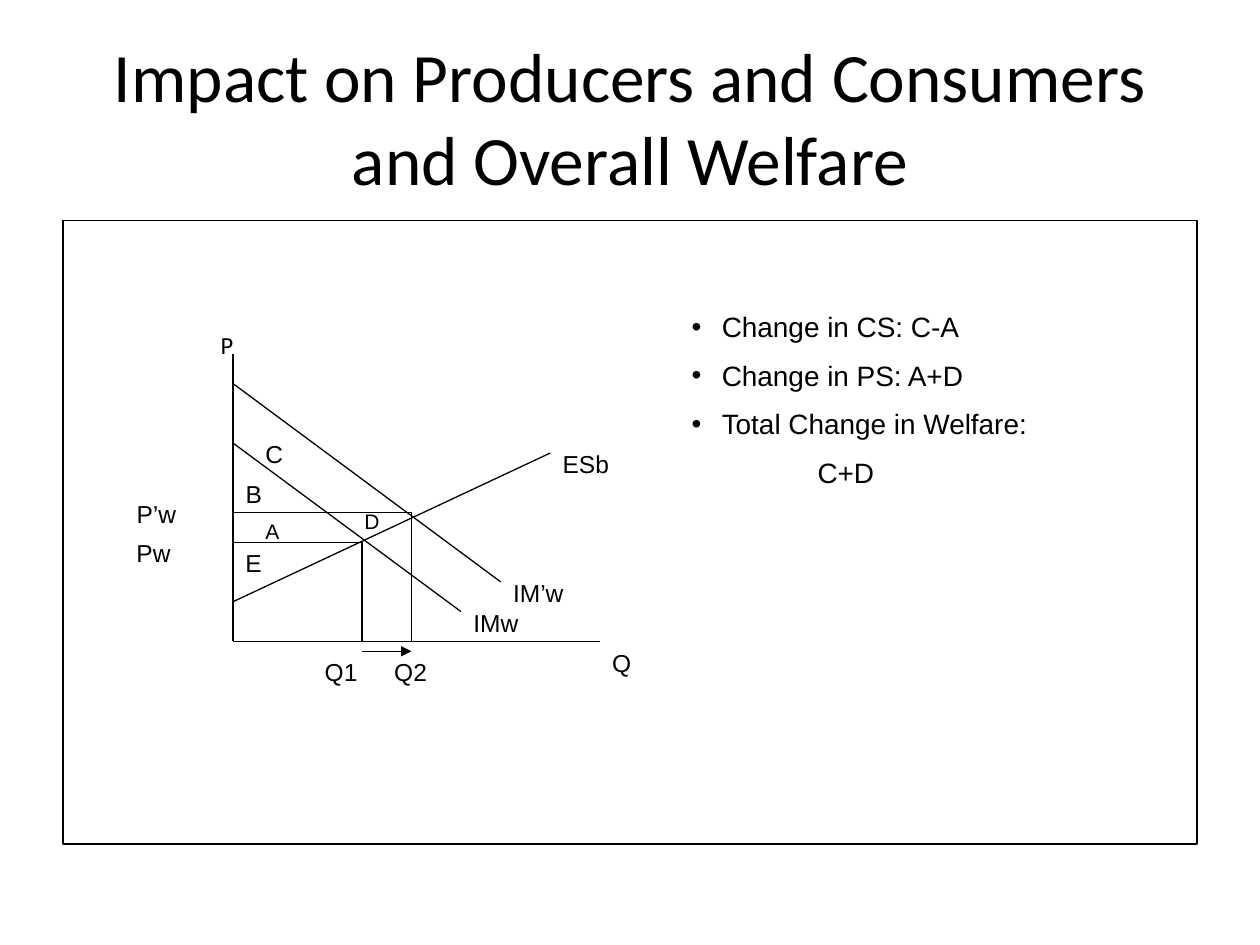
import dataclasses

import pptx
import pptx.dml.color
import pptx.enum.dml
import pptx.enum.shapes
import pptx.enum.text
import pptx.oxml
import pptx.oxml.ns
import pptx.util

Inches = pptx.util.Inches
Pt = pptx.util.Pt


@dataclasses.dataclass(frozen=True)
class Theme:
    """Colours, fonts and sizes of the slide."""
    ink: str = "000000"
    heading_font: str = "Calibri"
    body_font: str = "Arial"
    title_size: float = 39.6
    bullet_size: float = 16
    label_size: float = 14
    small_size: float = 12
    frame_width: float = 1
    line_width: float = 0.75


THEME = Theme()
ORIGIN_LEFT, ORIGIN_TOP = 1.85, 5.09
STEP = 2.91 / 37

LINES = [
    ((0, 29), (0, 0)),
    ((0, 0), (37, 0)),
    ((0, 4), (32, 19)),
    ((0, 20), (23, 3)),
    ((0, 26), (27, 6)),
    ((13, 10), (13, 0)),
    ((18, 13), (18, 0)),
    ((13, 10), (0, 10)),
    ((18, 13), (0, 13)),
]

LABELS = [
    ("ESb", 32, 20, 10),
    ("IM’w", 27, 7, 9),
    ("IMw", 23, 4, 8),
    ("Q", 37, 0, 6),
    ("P’w", -11, 15, 11),
    ("Pw", -11, 11, 10),
    ("Q1", 8, -1, 7),
    ("Q2", 15, -1, 6),
    ("C", 2, 21, 6),
    ("B", 0, 17, 6),
    ("E", 0, 10, 8),
]
SMALL_LABELS = [("D", 12, 14, 6), ("A", 2, 13, 8)]


def colour(value):
    """Return a colour object for a hex value."""
    return pptx.dml.color.RGBColor.from_string(value)


def grid_point(column, row):
    """Return the slide position in inches of a point on the graph grid."""
    return ORIGIN_LEFT + column * STEP, ORIGIN_TOP - row * STEP


def add_xml(parent, tag, **attributes):
    """Append a DrawingML element and return it."""
    element = pptx.oxml.parse_xml(f"<{tag} {pptx.oxml.ns.nsdecls('a')}/>")
    for name, value in attributes.items():
        element.set(name, value)
    parent.append(element)
    return element


def add_text(page, lines, area, font=THEME.body_font, size=THEME.label_size,
             align=pptx.enum.text.PP_ALIGN.LEFT,
             anchor=pptx.enum.text.MSO_ANCHOR.TOP, space=0):
    """Add a text box with one paragraph per line and return its paragraphs."""
    box = page.shapes.add_textbox(*map(Inches, area))
    frame = box.text_frame
    frame.word_wrap = True
    frame.vertical_anchor = anchor
    for index, line in enumerate(lines):
        para = frame.add_paragraph() if index else frame.paragraphs[0]
        para.alignment = align
        para.space_before = Pt(space if index else 0)
        span = para.add_run()
        span.text = line
        span.font.name = font
        span.font.size = Pt(size)
        span.font.color.rgb = colour(THEME.ink)
    return frame.paragraphs


def add_label(page, text, column, row, columns, **text_format):
    """Add a graph label whose top left corner is on the grid."""
    add_text(page, [text], (*grid_point(column, row), columns * STEP, 0.33), **text_format)


def add_line(page, start, end, arrow=False):
    """Draw a line between two grid points, with an optional arrowhead."""
    points = map(Inches, (*grid_point(*start), *grid_point(*end)))
    line = page.shapes.add_connector(pptx.enum.shapes.MSO_CONNECTOR.STRAIGHT, *points)
    line.line.color.rgb = colour(THEME.ink)
    line.line.width = Pt(THEME.line_width)
    if arrow:
        add_xml(line.line._get_or_add_ln(), "a:tailEnd", type="triangle")
    add_xml(line._element.spPr, "a:effectLst")


def add_frame(page, area):
    """Add the outlined panel around the content."""
    frame = page.shapes.add_shape(pptx.enum.shapes.MSO_SHAPE.RECTANGLE, *map(Inches, area))
    frame.shadow.inherit = False
    frame.fill.background()
    frame.line.color.rgb = colour(THEME.ink)
    frame.line.width = Pt(THEME.frame_width)


def indent(para, left, bullet=False):
    """Indent a paragraph, hanging a bullet in the margin if asked."""
    properties = para._p.get_or_add_pPr()
    properties.set("marL", str(Inches(left)))
    properties.set("indent", str(-Inches(left) if bullet else 0))
    if bullet:
        add_xml(properties, "a:buFont", typeface=THEME.body_font)
        add_xml(properties, "a:buChar", char="•")


def add_graph(page):
    """Draw the supply and demand graph with its labels."""
    for start, end in LINES:
        add_line(page, start, end)
    add_line(page, (13, -1), (18, -1), arrow=True)
    for label in LABELS:
        add_label(page, *label)
    for label in SMALL_LABELS:
        add_label(page, *label, size=THEME.small_size)
    add_label(page, "P", -2.5, 32, 5, font=THEME.heading_font)


def add_findings(page):
    """Add the bulleted welfare changes and their total."""
    lines = ["Change in CS: C-A", "Change in PS: A+D", "Total Change in Welfare:", "C+D"]
    *bullets, total = add_text(page, lines, (5.39, 2.41, 3.86, 1.57),
                               size=THEME.bullet_size, space=8.6)
    for para in bullets:
        indent(para, 0.24, bullet=True)
    indent(total, 1)


def main():
    """Build the slide and save the deck."""
    deck = pptx.Presentation()
    deck.slide_width, deck.slide_height = Inches(10), Inches(7.5)
    page = deck.slides.add_slide(deck.slide_layouts[6])
    add_text(page, ["Impact on Producers and Consumers and Overall Welfare"],
             (0.5, 0.3, 9, 1.25), font=THEME.heading_font, size=THEME.title_size,
             align=pptx.enum.text.PP_ALIGN.CENTER,
             anchor=pptx.enum.text.MSO_ANCHOR.MIDDLE)
    add_frame(page, (0.5, 1.75, 9, 4.95))
    add_graph(page)
    add_findings(page)
    deck.save("out.pptx")


if __name__ == "__main__":
    main()
